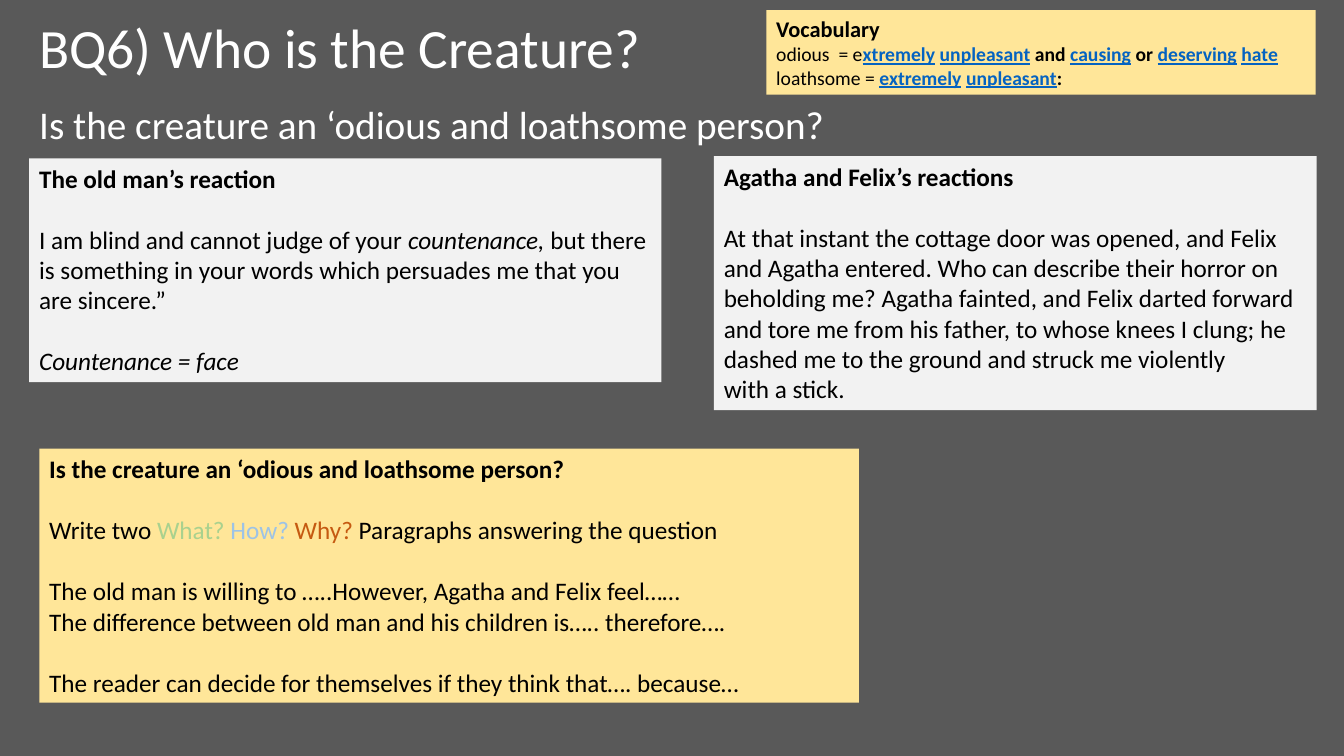
from dataclasses import dataclass

from pptx import Presentation
from pptx import util as u
from pptx.dml.color import RGBColor
from pptx.enum import shapes, text

FONT = "Calibri"
BLACK, WHITE, LINK = "000000", "FFFFFF", "0563C1"
BACKGROUND, PALE_GREY, PALE_YELLOW = "595959", "F2F2F2", "FFE699"
BLANK_LINE = 22  # points of space that separate blocks of 18 pt text


@dataclass
class Run:
    text: str
    bold: bool = False
    italic: bool = False
    underline: bool = False
    color: str = BLACK


@dataclass
class Para:
    runs: list[Run]
    size: float = 18
    before: float = 0
    spacing: float = 1.0


@dataclass
class Box:
    left: float
    top: float
    width: float
    height: float
    paras: list[Para]
    fill: str | None = None
    anchor: text.MSO_ANCHOR = text.MSO_ANCHOR.TOP


def rgb(value: str) -> RGBColor:
    return RGBColor.from_string(value)


def bold(words: str) -> Run:
    return Run(words, bold=True)


def link(words: str) -> Run:
    return Run(words, bold=True, underline=True, color=LINK)


def heading(words: str, size: float) -> Para:
    return Para([Run(words, color=WHITE)], size, spacing=0.9)


def plain(words: str, before: float = 0) -> Para:
    return Para([Run(words)], before=before)


def draw_box(s, box: Box) -> None:
    place = [u.Inches(v) for v in (box.left, box.top, box.width, box.height)]
    if box.fill:
        sp = s.shapes.add_shape(shapes.MSO_SHAPE.RECTANGLE, *place)
        sp.shadow.inherit = False
        sp.fill.solid()
        sp.fill.fore_color.rgb = rgb(box.fill)
        sp.line.fill.background()
    else:
        sp = s.shapes.add_textbox(*place)
    tf = sp.text_frame
    tf.word_wrap = True
    tf.vertical_anchor = box.anchor
    for i, para in enumerate(box.paras):
        p = tf.add_paragraph() if i else tf.paragraphs[0]
        p.alignment = text.PP_ALIGN.LEFT
        p.line_spacing = para.spacing
        p.space_before = u.Pt(para.before)
        for run in para.runs:
            r = p.add_run()
            r.text = run.text
            r.font.name = FONT
            r.font.size = u.Pt(para.size)
            r.font.bold = run.bold
            r.font.italic = run.italic
            r.font.underline = run.underline
            r.font.color.rgb = rgb(run.color)


QUESTION = "Is the creature an ‘odious and loathsome person?"

BOXES = [
    # Title and question
    Box(0.29, 0.29, 11.26, 0.42, [heading("BQ6) Who is the Creature?", 39.6)],
        anchor=text.MSO_ANCHOR.MIDDLE),
    Box(0.29, 1, 12.88, 6.35, [heading(QUESTION, 28)]),
    # Quotations
    Box(0.29, 1.57, 6.27, 2.22, [
        Para([bold("The old man’s reaction")]),
        Para([Run("I am blind and cannot judge of your "),
              Run("countenance,", italic=True),
              Run(" but there is something in your words which persuades me "
                  "that you are sincere.”")], before=BLANK_LINE),
        Para([Run("Countenance = face", italic=True)], before=BLANK_LINE),
    ], PALE_GREY),
    Box(7.08, 1.55, 5.98, 2.52, [
        Para([bold("Agatha and Felix’s reactions")]),
        plain("At that instant the cottage door was opened, and Felix and "
              "Agatha entered. Who can describe their horror on beholding me? "
              "Agatha fainted, and Felix darted forward and tore me from his "
              "father, to whose knees I clung; he dashed me to the ground and "
              "struck me violently", BLANK_LINE),
        plain("with a stick."),
    ], PALE_GREY),
    # Writing task
    Box(0.39, 4.45, 8.13, 2.52, [
        Para([bold(QUESTION)]),
        Para([Run("Write two "),
              Run("What? ", color="A9D18E"),
              Run("How? ", color="9DC3E6"),
              Run("Why? ", color="C55A11"),
              Run("Paragraphs answering the question")], before=BLANK_LINE),
        plain("The old man is willing to …..However, Agatha and Felix feel……",
              BLANK_LINE),
        plain("The difference between old man and his children is….. therefore…."),
        plain("The reader can decide for themselves if they think that…. because…",
              BLANK_LINE),
    ], PALE_YELLOW),
    # Vocabulary
    Box(7.6, 0.1, 5.45, 0.84, [
        Para([bold("Vocabulary")], 16),
        Para([Run("odious  = e"), link("xtremely"), bold(" "),
              link("unpleasant"), bold(" and "), link("causing"),
              bold(" or "), link("deserving"), bold(" "), link("hate")], 14),
        Para([Run("loathsome = "), link("extremely"), bold(" "),
              link("unpleasant"), bold(":")], 14),
    ], PALE_YELLOW),
]


def main() -> None:
    prs = Presentation()
    prs.slide_width, prs.slide_height = u.Inches(13.33), u.Inches(7.5)
    s = prs.slides.add_slide(prs.slide_layouts[6])
    s.background.fill.solid()
    s.background.fill.fore_color.rgb = rgb(BACKGROUND)
    for box in BOXES:
        draw_box(s, box)
    prs.save("out.pptx")


if __name__ == "__main__":
    main()
